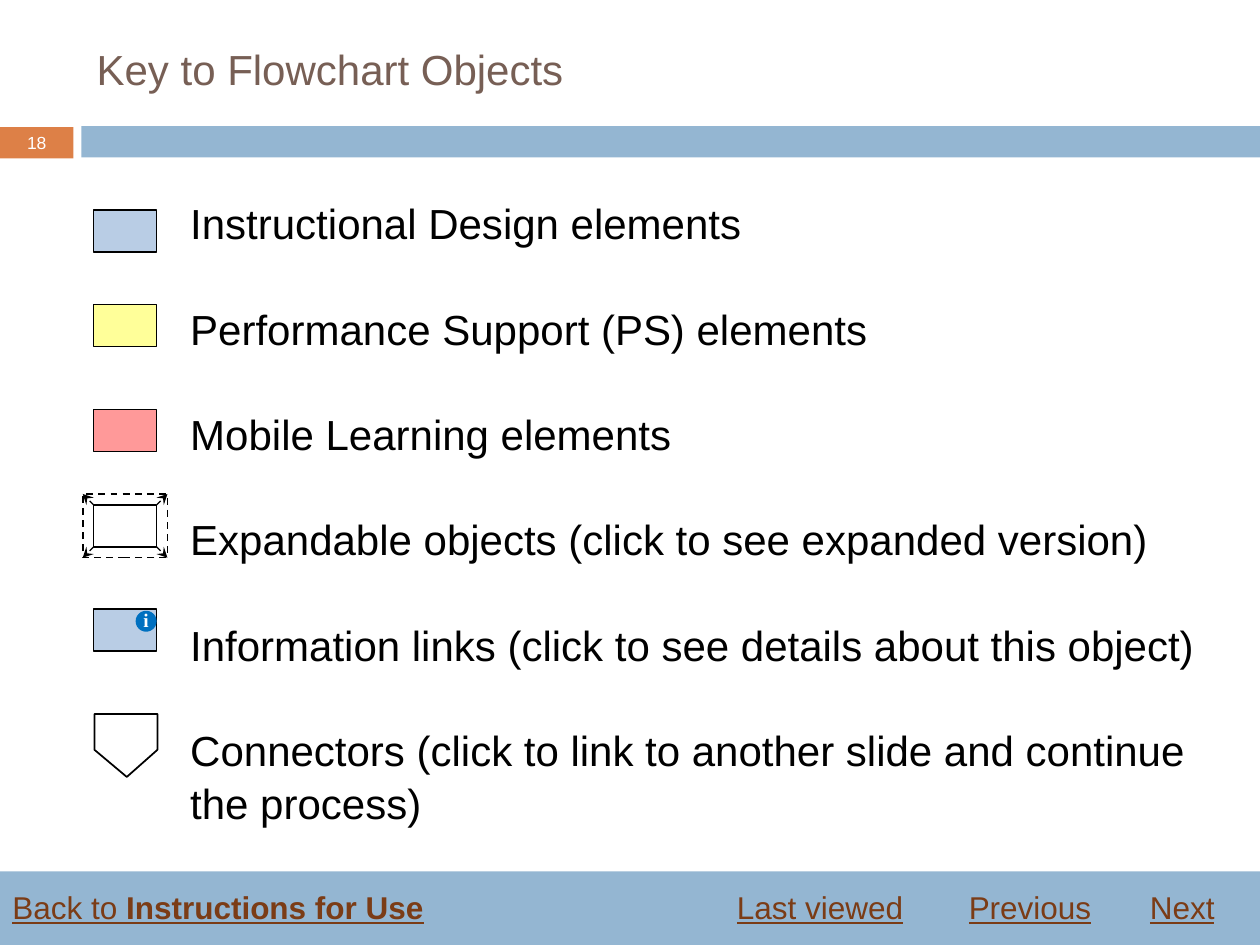
from lxml.etree import SubElement
from pptx import Presentation
from pptx.dml.color import RGBColor
from pptx.enum.dml import MSO_LINE
from pptx.enum.shapes import MSO_CONNECTOR, MSO_SHAPE
from pptx.enum.text import MSO_ANCHOR, MSO_AUTO_SIZE, PP_ALIGN
from pptx.oxml.ns import qn
from pptx.util import Pt

COLORS = {
    "orange": "DD8047", "bar": "94B6D2", "title": "775F55", "link": "7B3C16",
    "design": "B9CDE5", "support": "FFFF99", "mobile": "FF9999",
    "info": "0070C0", "black": "000000", "white": "FFFFFF",
}
ENTRIES = [
    "Instructional Design elements",
    "Performance Support (PS) elements",
    "Mobile Learning elements",
    "Expandable objects (click to see expanded version)",
    "Information links (click to see details about this object)",
    "Connectors (click to link to another slide and continue the process)",
]
KEY_LEFT, KEY_WIDTH, KEY_HEIGHT = 53.5, 36, 24


def color(name):
    return RGBColor.from_string(COLORS[name])


class KeySlide:
    font_name = "Arial"

    def __init__(self, slide):
        self.slide = slide

    def format_runs(self, paragraph, size, color_name, bold=False, underline=False, font_name=None):
        for run in paragraph.runs:
            run.font.name = font_name or self.font_name
            run.font.size = Pt(size)
            run.font.bold = bold
            run.font.underline = underline
            run.font.color.rgb = color(color_name)

    def place(self, shape, left, top, width, height):
        shape.left, shape.top = Pt(left), Pt(top)
        shape.width, shape.height = Pt(width), Pt(height)
        shape.text_frame.auto_size = MSO_AUTO_SIZE.NONE

    def title(self, text, box):
        shape = self.slide.shapes.title
        self.place(shape, *box)
        shape.text_frame.text = text
        shape.text_frame.vertical_anchor = MSO_ANCHOR.MIDDLE
        paragraph = shape.text_frame.paragraphs[0]
        paragraph.alignment = PP_ALIGN.LEFT
        self.format_runs(paragraph, 24, "title")

    def body(self, entries, box):
        shape = self.slide.placeholders[1]
        self.place(shape, *box)
        shape.text_frame.text = "\n".join(entries)
        for index, paragraph in enumerate(shape.text_frame.paragraphs):
            paragraph.space_before = Pt(30 if index else 0)
            paragraph.line_spacing = 1.05
            properties = paragraph._p.get_or_add_pPr()
            properties.set("marL", "0")
            properties.set("indent", "0")
            SubElement(properties, qn("a:buNone"))
            self.format_runs(paragraph, 24, "black")

    def finish(self, shape, fill, outlined):
        shape.shadow.inherit = False
        if fill:
            shape.fill.solid()
            shape.fill.fore_color.rgb = color(fill)
        else:
            shape.fill.background()
        if outlined:
            shape.line.color.rgb = color("black")
            shape.line.width = Pt(1)
        else:
            shape.line.fill.background()
        return shape

    def shape(self, left, top, width, height, fill=None, outlined=False, kind=MSO_SHAPE.RECTANGLE):
        shape = self.slide.shapes.add_shape(kind, Pt(left), Pt(top), Pt(width), Pt(height))
        return self.finish(shape, fill, outlined)

    def key_box(self, top, fill):
        return self.shape(KEY_LEFT, top, KEY_WIDTH, KEY_HEIGHT, fill, outlined=True)

    def label(self, shape, text, size, **style):
        frame = shape.text_frame
        frame.text = text
        frame.word_wrap = False
        frame.vertical_anchor = MSO_ANCHOR.MIDDLE
        frame.paragraphs[0].alignment = PP_ALIGN.CENTER
        self.format_runs(frame.paragraphs[0], size, "white", **style)

    def outline(self, points, fill):
        builder = self.slide.shapes.build_freeform(Pt(points[0][0]), Pt(points[0][1]))
        builder.add_line_segments([(Pt(x), Pt(y)) for x, y in points[1:]], close=True)
        self.finish(builder.convert_to_shape(), fill, outlined=True)

    def arrow(self, start, end):
        line = self.slide.shapes.add_connector(
            MSO_CONNECTOR.STRAIGHT, *(Pt(value) for value in (*start, *end)))
        line.line.color.rgb = color("black")
        line.line.width = Pt(0.75)
        SubElement(line.line._get_or_add_ln(), qn("a:tailEnd"), type="stealth")
        SubElement(line._element.spPr, qn("a:effectLst"))

    def expandable_box(self, top):
        """Draw a box with arrows from its corners to a dashed frame."""
        margin = 6.2
        self.key_box(top, "white")
        frame = self.shape(KEY_LEFT - margin, top - margin, KEY_WIDTH + 2 * margin,
                           KEY_HEIGHT + 2 * margin, outlined=True)
        frame.line.dash_style = MSO_LINE.DASH
        for x, dx in ((KEY_LEFT, -margin), (KEY_LEFT + KEY_WIDTH, margin)):
            for y, dy in ((top, -margin), (top + KEY_HEIGHT, margin)):
                self.arrow((x, y), (x + dx, y + dy))

    def link(self, left, width, text, bold_text=""):
        box = self.slide.shapes.add_textbox(Pt(left), Pt(504), Pt(width), Pt(29))
        box.text_frame.word_wrap = True
        paragraph = box.text_frame.paragraphs[0]
        paragraph.text = text
        if bold_text:
            paragraph.add_run().text = bold_text
        self.format_runs(paragraph, 18, "link", underline=True)
        if bold_text:
            paragraph.runs[-1].font.bold = True


def main():
    presentation = Presentation()
    presentation.slide_width, presentation.slide_height = Pt(720), Pt(540)
    page = KeySlide(presentation.slides.add_slide(presentation.slide_layouts[1]))

    number = page.shape(0, 72.6, 42, 18, "orange")
    page.label(number, "18", 10)
    page.shape(46.5, 72, 673.5, 18, "bar")
    page.shape(0, 498, 720, 42, "bar")
    page.title("Key to Flowchart Objects", (48, 6, 654, 66))
    page.body(ENTRIES, (101.5, 108, 595, 378))

    for top, fill in ((120, "design"), (174, "support"), (234, "mobile"), (348, "design")):
        page.key_box(top, fill)
    page.expandable_box(288.5)
    info = page.shape(77.5, 349, 12, 12, "info", kind=MSO_SHAPE.OVAL)
    page.label(info, "i", 11, bold=True, font_name="Times New Roman")
    info.text_frame.margin_top, info.text_frame.margin_bottom = Pt(3.6), Pt(5)
    page.outline([(54, 408), (90, 408), (90, 428.5), (72.5, 444), (54, 428.5)], "white")

    page.link(0, 264, "Back to ", "Instructions for Use")
    for left, width, text in ((414, 109.5, "Last viewed"), (546.5, 89.5, "Previous"), (650, 58.5, "Next")):
        page.link(left, width, text)

    presentation.save("out.pptx")


if __name__ == "__main__":
    main()
